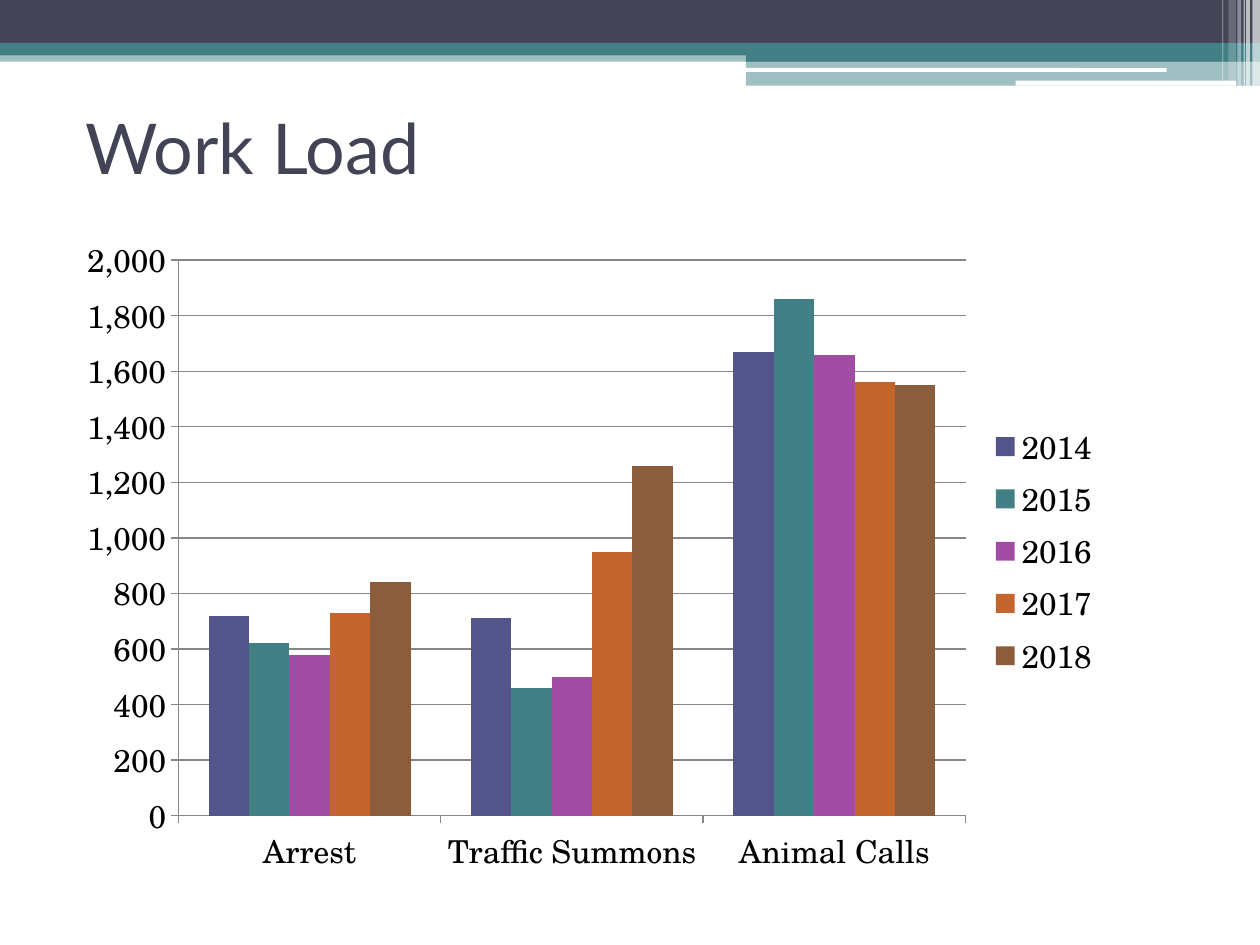
from dataclasses import dataclass

from lxml.etree import SubElement as Sub
from pptx import Presentation
from pptx.chart.data import CategoryChartData as Data
from pptx.dml.color import RGBColor as Color
from pptx.enum.chart import XL_CHART_TYPE as Kind, XL_LEGEND_POSITION as Side, XL_TICK_MARK as Tick
from pptx.enum.shapes import MSO_SHAPE as Form
from pptx.enum.text import MSO_ANCHOR as Anchor
from pptx.oxml.ns import qn
from pptx.util import Inches, Pt

HUES = {
    "navy": "424456", "teal": "438086", "white": "FFFFFF", "black": "000000",
    "grey": "868686", "blue": "53548A", "plum": "A04DA3", "rust": "C4652D",
    "brown": "8B5D3D",
}


@dataclass
class Bar:
    left: float
    top: float
    width: float
    height: float
    hue: str
    alpha: int = 100
    form: Form = Form.RECTANGLE


@dataclass
class Year:
    name: str
    hue: str
    counts: tuple


BARS = [
    Bar(0, 0.4, 10, 0.09, "teal", 50),
    Bar(0, 0, 10, 0.34, "navy"),
    Bar(0, 0.34, 10, 0.1, "teal"),
    Bar(5.92, 0.39, 4.08, 0.1, "teal"),
    Bar(5.92, 0.48, 4.08, 0.2, "teal", 50),
    Bar(5.91, 0.54, 3.35, 0.03, "white", form=Form.ROUNDED_RECTANGLE),
    Bar(8.06, 0.64, 1.75, 0.04, "white", form=Form.ROUNDED_RECTANGLE),
] + [
    Bar(left, 0, width, height, "white", alpha)
    for left, width, height, alpha in [
        (9.94, 0.06, 0.68, 65), (9.89, 0.03, 0.68, 65), (9.87, 0.01, 0.68, 60),
        (9.82, 0.03, 0.68, 40), (9.75, 0.06, 0.64, 20), (9.7, 0.01, 0.64, 30),
    ]
]
GROUPS = ("Arrest", "Traffic Summons", "Animal Calls")
YEARS = [
    Year("2014", "blue", (720, 710, 1670)),
    Year("2015", "teal", (620, 460, 1860)),
    Year("2016", "plum", (580, 500, 1660)),
    Year("2017", "rust", (730, 950, 1560)),
    Year("2018", "brown", (840, 1260, 1550)),
]
PLOT = {"x": 0.11, "y": 0.06, "w": 0.75, "h": 0.84}


def paint(fill, hue: str) -> None:
    fill.solid()
    fill.fore_color.rgb = Color.from_string(HUES[hue])


def style(font, face: str, size: float, hue: str) -> None:
    font.name = face
    font.size = Pt(size)
    font.color.rgb = Color.from_string(HUES[hue])


def draw_bar(slide, bar: Bar) -> None:
    shape = slide.shapes.add_shape(
        bar.form, Inches(bar.left), Inches(bar.top), Inches(bar.width), Inches(bar.height))
    shape.shadow.inherit = False
    shape.line.fill.background()
    paint(shape.fill, bar.hue)
    if bar.alpha < 100:
        tint = shape.fill._xPr.find(qn("a:solidFill"))[0]
        Sub(tint, qn("a:alpha"), val=str(bar.alpha * 1000))


def add_text(slide, text: str, *, box: tuple, face: str, size: float, hue: str) -> None:
    frame = slide.shapes.add_textbox(*map(Inches, box)).text_frame
    frame.word_wrap = True
    frame.vertical_anchor = Anchor.MIDDLE
    run = frame.paragraphs[0].add_run()
    run.text = text
    style(run.font, face, size, hue)


def rule(line) -> None:
    paint(line.fill, "grey")
    line.width = Pt(0.75)


def place_plot(chart) -> None:
    area = chart._chartSpace.chart.plotArea
    for old in area.findall(qn("c:layout")):
        area.remove(old)
    layout = Sub(area, qn("c:layout"))
    area.insert(0, layout)
    manual = Sub(layout, qn("c:manualLayout"))
    Sub(manual, qn("c:layoutTarget"), val="inner")
    for side in "xy":
        Sub(manual, qn(f"c:{side}Mode"), val="edge")
    for key, part in PLOT.items():
        Sub(manual, qn(f"c:{key}"), val=str(part))


def draw_chart(slide, box: tuple) -> None:
    data = Data(number_format="#,##0")
    data.categories = GROUPS
    for year in YEARS:
        data.add_series(year.name, year.counts)
    chart = slide.shapes.add_chart(Kind.COLUMN_CLUSTERED, *map(Inches, box), data).chart
    style(chart.font, "TeX Gyre Schola", 18, "black")
    chart.has_title = False
    chart.has_legend = True
    chart.legend.position = Side.RIGHT
    chart.legend.include_in_layout = False
    plot = chart.plots[0]
    plot.gap_width = 150
    plot.overlap = 0
    plot.vary_by_categories = False
    for series, year in zip(plot.series, YEARS):
        paint(series.format.fill, year.hue)
    for axis in (chart.category_axis, chart.value_axis):
        axis.major_tick_mark = Tick.OUTSIDE
        axis.minor_tick_mark = Tick.NONE
        rule(axis.format.line)
    scale = chart.value_axis
    scale.minimum_scale, scale.maximum_scale, scale.major_unit = 0, 2000, 200
    scale.tick_labels.number_format = "#,##0"
    scale.tick_labels.number_format_is_linked = False
    scale.has_major_gridlines = True
    rule(scale.major_gridlines.format.line)
    place_plot(chart)


def main() -> None:
    """Build the work load slide."""
    deck = Presentation()
    deck.slide_width, deck.slide_height = Inches(10), Inches(7.5)
    slide = deck.slides.add_slide(deck.slide_layouts[6])
    for bar in BARS:
        draw_bar(slide, bar)
    add_text(slide, "Work Load", box=(0.58, 0.58, 9, 1.17), face="Lato", size=40, hue="navy")
    draw_chart(slide, (0.5, 1.75, 8.33, 5.25))
    deck.save("out.pptx")


if __name__ == "__main__":
    main()
